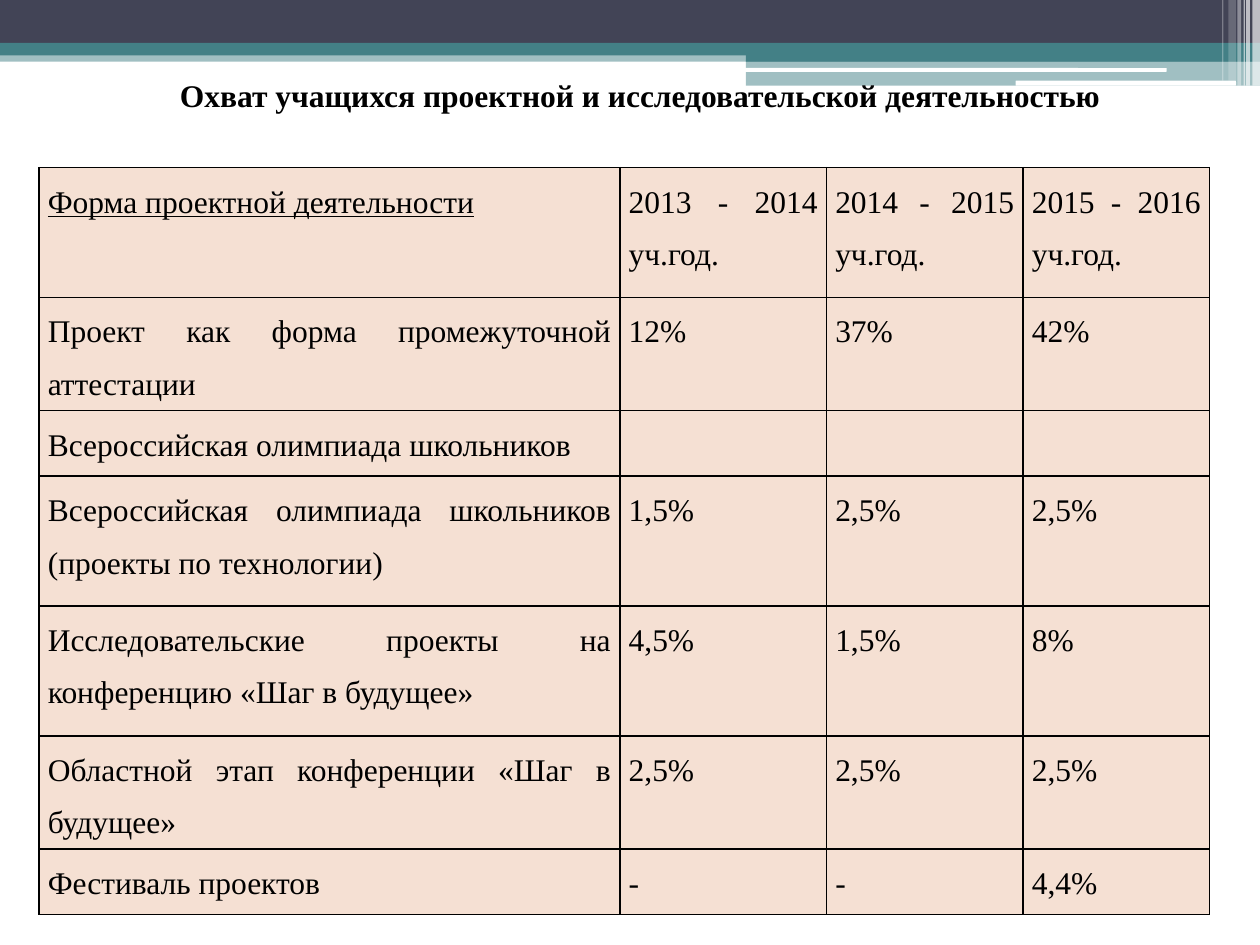
from dataclasses import dataclass

from lxml import etree
from pptx import Presentation
from pptx import util as u
from pptx.dml.color import RGBColor
from pptx.enum import shapes, text
from pptx.oxml.ns import qn


@dataclass(frozen=True)
class Theme:
    dark: str = "424456"
    teal: str = "438086"
    white: str = "FFFFFF"
    ink: str = "000000"
    cell: str = "F5E0D3"
    font: str = "Times New Roman"
    size: int = 18
    border: int = 1
    line_spacing: float = 1.5
    cell_margin: float = 0.07


class SlideBuilder:
    def __init__(self, slide, theme):
        self.slide = slide
        self.theme = theme

    def bar(self, left, top, width, height, color, opacity=100, rounded=False):
        kind = shapes.MSO_SHAPE.ROUNDED_RECTANGLE if rounded else shapes.MSO_SHAPE.RECTANGLE
        shape = self.slide.shapes.add_shape(
            kind, u.Inches(left), u.Inches(top), u.Inches(width), u.Inches(height))
        shape.shadow.inherit = False
        shape.line.fill.background()
        shape.fill.solid()
        shape.fill.fore_color.rgb = RGBColor.from_string(color)
        if opacity < 100:
            fill_color = shape.fill._xPr.find(qn("a:solidFill"))[0]
            etree.SubElement(fill_color, qn("a:alpha"), val=str(opacity * 1000))

    def add_words(self, paragraph, words, bold=False, underline=False):
        paragraph.alignment = text.PP_ALIGN.JUSTIFY
        run = paragraph.add_run()
        run.text = words
        font = run.font
        font.name = self.theme.font
        font.size = u.Pt(self.theme.size)
        font.color.rgb = RGBColor.from_string(self.theme.ink)
        font.bold = bold
        font.underline = underline

    def title(self, left, top, width, height, words):
        box = self.slide.shapes.add_textbox(
            u.Inches(left), u.Inches(top), u.Inches(width), u.Inches(height))
        frame = box.text_frame
        frame.word_wrap = True
        frame.auto_size = text.MSO_AUTO_SIZE.SHAPE_TO_FIT_TEXT
        frame.vertical_anchor = text.MSO_ANCHOR.MIDDLE
        self.add_words(frame.paragraphs[0], words, bold=True)

    def style_cell(self, cell):
        cell.margin_left = cell.margin_right = u.Inches(self.theme.cell_margin)
        cell.margin_top = cell.margin_bottom = 0
        properties = cell._tc.get_or_add_tcPr()
        for side in ("a:lnL", "a:lnR", "a:lnT", "a:lnB"):
            line = etree.SubElement(properties, qn(side), w=str(u.Pt(self.theme.border)))
            fill = etree.SubElement(line, qn("a:solidFill"))
            etree.SubElement(fill, qn("a:srgbClr"), val=self.theme.ink)
        cell.fill.solid()
        cell.fill.fore_color.rgb = RGBColor.from_string(self.theme.cell)

    def table(self, left, top, widths, heights, rows):
        table = self.slide.shapes.add_table(
            len(heights), len(widths), u.Inches(left), u.Inches(top),
            u.Inches(sum(widths)), u.Inches(sum(heights))).table
        table.first_row = table.horz_banding = False
        for column, width in zip(table.columns, widths):
            column.width = u.Inches(width)
        for row, height in zip(table.rows, heights):
            row.height = u.Inches(height)
        for i, row in enumerate(rows):
            for j, words in enumerate(row):
                cell = table.cell(i, j)
                self.style_cell(cell)
                if words:
                    paragraph = cell.text_frame.paragraphs[0]
                    paragraph.line_spacing = self.theme.line_spacing
                    self.add_words(paragraph, words, underline=(i == j == 0))


def main():
    presentation = Presentation()
    presentation.slide_width = u.Inches(10)
    presentation.slide_height = u.Inches(7.5)
    theme = Theme()
    builder = SlideBuilder(
        presentation.slides.add_slide(presentation.slide_layouts[6]), theme)

    # Header bands
    builder.bar(0, 0.4, 10, 0.09, theme.teal, 50)
    builder.bar(0, 0, 10, 0.34, theme.dark)
    builder.bar(0, 0.34, 10, 0.1, theme.teal)
    builder.bar(5.92, 0.39, 4.08, 0.1, theme.teal)
    builder.bar(5.92, 0.48, 4.08, 0.2, theme.teal, 50)
    builder.bar(5.91, 0.54, 3.35, 0.03, theme.white, rounded=True)
    builder.bar(8.06, 0.64, 1.75, 0.04, theme.white, rounded=True)

    # Vertical stripes in the corner: left, width, height, opacity
    stripes = [
        (9.94, 0.06, 0.68, 65),
        (9.89, 0.03, 0.68, 65),
        (9.87, 0.01, 0.68, 60),
        (9.82, 0.03, 0.68, 40),
        (9.75, 0.06, 0.64, 20),
        (9.7, 0.01, 0.64, 30),
    ]
    for left, width, height, opacity in stripes:
        builder.bar(left, 0, width, height, theme.white, opacity)

    # Participation table
    tall, medium, short = 1.03, 0.9, 0.52
    builder.table(
        0.31, 1.33,
        widths=[4.61, 1.64, 1.56, 1.48],
        heights=[tall, medium, short, tall, tall, medium, short],
        rows=[
            ("Форма проектной деятельности",
             "2013 - 2014 уч.год.", "2014 - 2015 уч.год.", "2015 - 2016 уч.год."),
            ("Проект как форма промежуточной аттестации", "12%", "37%", "42%"),
            ("Всероссийская олимпиада школьников", "", "", ""),
            ("Всероссийская олимпиада школьников (проекты по технологии)",
             "1,5%", "2,5%", "2,5%"),
            ("Исследовательские проекты на конференцию «Шаг в будущее»",
             "4,5%", "1,5%", "8%"),
            ("Областной этап конференции «Шаг в будущее»", "2,5%", "2,5%", "2,5%"),
            ("Фестиваль проектов", "-", "-", "4,4%"),
        ])

    # Title
    builder.title(1.33, 0.55, 8.12, 0.4,
                  "Охват учащихся проектной и исследовательской деятельностью")

    presentation.save("out.pptx")


if __name__ == "__main__":
    main()
